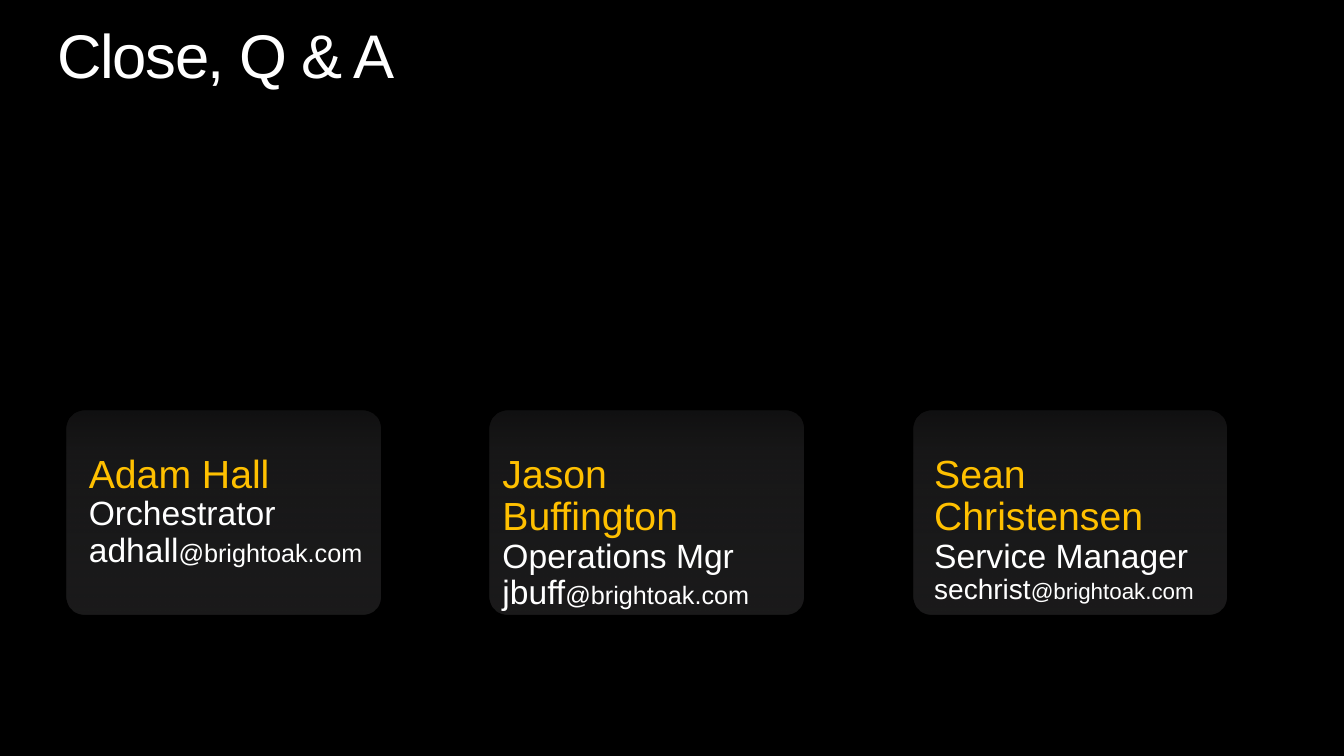
from pptx import Presentation
from pptx.dml.color import RGBColor
from pptx.enum.shapes import MSO_SHAPE as Shape
from pptx.oxml.ns import qn
from pptx.util import Pt
from lxml.etree import SubElement

FONT = "Arial"
WHITE, GOLD, BLACK = "FFFFFF", "FFC000", "000000"
CARD_STOPS = [(0, "424143", 40), (80, "565557", 27), (100, "575558", 19)]
DOMAIN = "@brightoak.com"
CARD_LEFT, CARD_TOP, CARD_STEP = 47.5, 293, 302.4
CARD_WIDTH, CARD_HEIGHT = 224, 146
TEXT_DROP = 31.7

SPEAKERS = [
    dict(name="Adam Hall", role="Orchestrator", account="adhall",
         sizes=(24, 18), inset=16, width=199),
    dict(name="Jason Buffington", role="Operations Mgr", account="jbuff",
         sizes=(24, 18), inset=9, width=207),
    dict(name="Sean Christensen", role="Service Manager", account="sechrist",
         sizes=(20, 16), inset=15, width=211),
]


def color(value):
    return RGBColor.from_string(value)


def add_text(shapes, box, lines):
    shape = shapes.add_textbox(*map(Pt, box))
    frame = shape.text_frame
    settings = dict(word_wrap=True, margin_left=0, margin_right=0,
                    margin_top=0, margin_bottom=0)
    for key, value in settings.items():
        setattr(frame, key, value)
    for index, line in enumerate(lines):
        paragraph = frame.add_paragraph() if index else frame.paragraphs[0]
        paragraph.line_spacing = 0.9
        for text, size, fill in line:
            run = paragraph.add_run()
            run.text = text
            for key, value in dict(name=FONT, size=Pt(size)).items():
                setattr(run.font, key, value)
            run.font.color.rgb = color(fill)
    return shape


def fill_gradient(shape, stops):
    shape.fill.gradient()
    shape.fill.gradient_angle = 90
    stop_list = next(shape.element.iter(qn("a:gsLst")))
    for stop in list(stop_list):
        stop_list.remove(stop)
    for position, value, opacity in stops:
        stop = SubElement(stop_list, qn("a:gs"), pos=str(position * 1000))
        tint = SubElement(stop, qn("a:srgbClr"), val=value)
        SubElement(tint, qn("a:alpha"), val=str(opacity * 1000))


def add_title(slide, box, text):
    shape = add_text(slide.shapes, box, [[(text, 44, WHITE)]])
    run = shape.text_frame.paragraphs[0].runs[0]
    run.font._element.set("spc", "-100")


def add_card(slide, box, speaker):
    left, top, width, height = box
    group = slide.shapes.add_group_shape()
    card = group.shapes.add_shape(Shape.ROUNDED_RECTANGLE, *map(Pt, box))
    card.adjustments[0] = 0.09
    card.shadow.inherit = False
    card.line.fill.background()
    fill_gradient(card, CARD_STOPS)
    account_size, domain_size = speaker["sizes"]
    text_box = (left + speaker["inset"], top + TEXT_DROP,
                speaker["width"], height - TEXT_DROP - 9)
    add_text(group.shapes, text_box, [
        [(speaker["name"], 28, GOLD)],
        [(speaker["role"], 24, WHITE)],
        [(speaker["account"], account_size, WHITE),
         (DOMAIN, domain_size, WHITE)],
    ])


def main():
    presentation = Presentation()
    presentation.slide_width, presentation.slide_height = Pt(960), Pt(540)
    slide = presentation.slides.add_slide(presentation.slide_layouts[6])
    background = slide.background.fill
    background.solid()
    background.fore_color.rgb = color(BLACK)
    add_title(slide, (41, 18, 878, 48), "Close, Q & A")
    for index, speaker in enumerate(SPEAKERS):
        left = CARD_LEFT + index * CARD_STEP
        add_card(slide, (left, CARD_TOP, CARD_WIDTH, CARD_HEIGHT), speaker)
    presentation.save("out.pptx")


if __name__ == "__main__":
    main()
